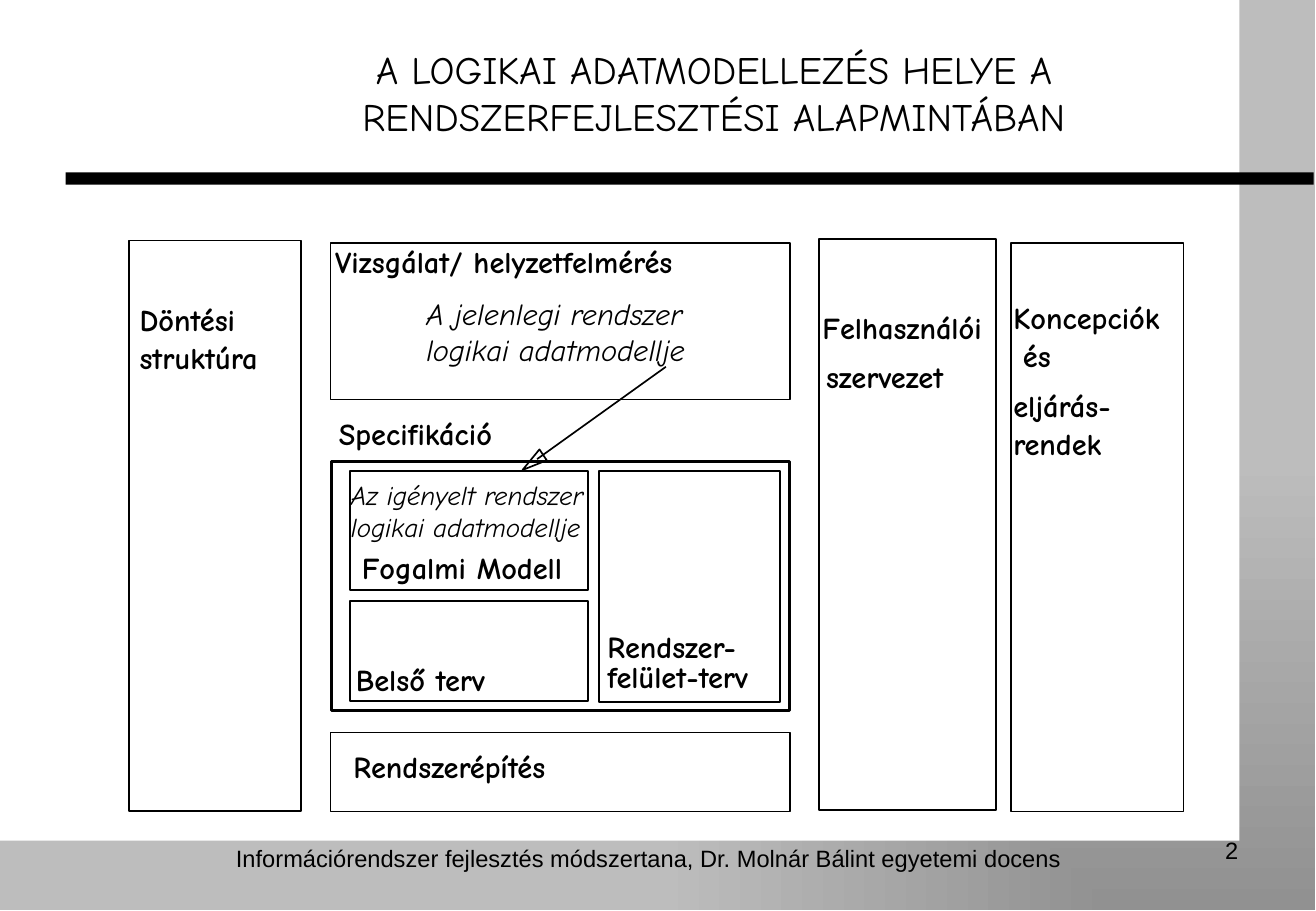
from lxml import etree
from pptx import Presentation
from pptx.dml.color import RGBColor
from pptx.enum.shapes import MSO_CONNECTOR as Connector, MSO_SHAPE as Shape
from pptx.enum.text import PP_ALIGN as Align
from pptx.oxml import parse_xml
from pptx.oxml.ns import nsdecls, qn
from pptx.util import Inches, Pt

COLORS = {"ink": "000000", "paper": "FFFFFF", "dark": "919191", "light": "BDBDBD"}


class Diagram:
    """Holds the style and the current slide."""

    def __init__(self, page, font="Comic Neue", size=18):
        self.page = page
        self.font = font
        self.size = size

    def color(self, name):
        return RGBColor.from_string(COLORS[name])

    def outline(self, shape, weight=1):
        shape.line.color.rgb = self.color("ink")
        shape.line.width = Pt(weight)

    def rectangle(self, left, top, width, height):
        box = self.page.shapes.add_shape(
            Shape.RECTANGLE, *map(Inches, (left, top, width, height)))
        box.shadow.inherit = False
        return box

    def panel(self, left, top, width, height, fill):
        box = self.rectangle(left, top, width, height)
        box.fill.solid()
        box.fill.fore_color.rgb = self.color(fill)
        box.line.fill.background()

    def gradient_panel(self, left, top, width, height, inner, outer):
        box = self.rectangle(left, top, width, height)
        box.line.fill.background()
        box.fill.gradient()
        for stop, name, position in zip(box.fill.gradient_stops, (inner, outer), (0, 1)):
            stop.color.rgb = self.color(name)
            stop.position = position
        # Spread from the lower right corner instead of along a line
        gradient = box.element.spPr.find(qn("a:gradFill"))
        gradient.replace(gradient.find(qn("a:lin")), parse_xml(
            f'<a:path {nsdecls("a")} path="rect">'
            '<a:fillToRect l="100000" t="100000" r="0" b="0"/></a:path>'))

    def frame(self, left, top, width, height, weight=1):
        box = self.rectangle(left, top, width, height)
        box.fill.background()
        self.outline(box, weight)

    def text(self, words, left, top, width, height=0.4, size=None, font=None,
             bold=False, italic=False, align=Align.LEFT, wrap=False):
        box = self.page.shapes.add_textbox(*map(Inches, (left, top, width, height)))
        frame = box.text_frame
        frame.word_wrap = wrap
        frame.text = words
        for para in frame.paragraphs:
            para.alignment = align
            for span in para.runs:
                span.font.name = font or self.font
                span.font.size = Pt(size or self.size)
                span.font.bold = bold
                span.font.italic = italic
                span.font.color.rgb = self.color("ink")

    def line(self, start, end):
        line = self.page.shapes.add_connector(
            Connector.STRAIGHT, *map(Inches, (*start, *end)))
        self.outline(line)
        etree.SubElement(line.element.spPr, qn("a:effectLst"))

    def polygon(self, first, *others):
        builder = self.page.shapes.build_freeform(*map(Inches, first))
        builder.add_line_segments(
            [tuple(map(Inches, point)) for point in others], close=True)
        shape = builder.convert_to_shape()
        shape.shadow.inherit = False
        shape.fill.background()
        self.outline(shape)


def main():
    deck = Presentation()
    deck.slide_width = Inches(10.83)
    deck.slide_height = Inches(7.5)
    diagram = Diagram(deck.slides.add_slide(deck.slide_layouts[6]))

    # Background and title rule
    diagram.gradient_panel(0, 0, 10.82, 7.49, "dark", "light")
    diagram.panel(0, 0, 10.2, 6.92, "paper")
    diagram.panel(0.54, 1.42, 10.27, 0.1, "ink")

    # Footer, page number and title
    diagram.text("Információrendszer fejlesztés módszertana, Dr. Molnár Bálint egyetemi docens",
                 1.56, 6.9, 7.56, 0.6, size=14, font="Arial", align=Align.CENTER, wrap=True)
    diagram.text("2", 7.76, 6.83, 2.53, 0.52, size=14, font="Arial",
                 align=Align.RIGHT, wrap=True)
    diagram.text("A LOGIKAI ADATMODELLEZÉS HELYE A RENDSZERFEJLESZTÉSI ALAPMINTÁBAN",
                 1.61, 0.33, 8.54, 0.87, size=23, align=Align.CENTER, wrap=True)

    # Frames: three side columns, three stages, three specification parts
    for area in (
        (1.06, 1.98, 1.42, 4.7), (6.74, 1.97, 1.46, 4.7), (8.32, 2, 1.42, 4.68),
        (2.73, 3.8, 3.77, 2.05, 2), (2.72, 2, 3.78, 1.29), (2.72, 6.03, 3.78, 0.65),
        (2.88, 3.88, 1.96, 0.98), (4.93, 3.88, 1.49, 1.9), (2.88, 4.95, 1.96, 0.82),
    ):
        diagram.frame(*area)

    # Bold labels
    for words, left, top, width in (
        ("Döntési", 1.05, 2.43, 1.09),
        ("struktúra", 1.05, 2.74, 1.33),
        ("Vizsgálat/ helyzetfelmérés", 2.66, 1.95, 3.46),
        ("Felhasználói", 6.67, 2.5, 1.64),
        ("szervezet", 6.7, 2.9, 1.37),
        ("Koncepciók", 8.24, 2.41, 1.48),
        ("és", 8.32, 2.73, 0.49),
        ("eljárás-", 8.24, 3.14, 1.18),
        ("rendek", 8.24, 3.45, 1.02),
        ("Specifikáció", 2.69, 3.37, 1.65),
        ("Fogalmi Modell", 2.88, 4.47, 1.97),
        ("Belső terv", 2.83, 5.39, 1.43),
        ("Rendszer-", 4.9, 5.12, 1.45),
        ("felület-terv", 4.9, 5.37, 1.65),
        ("Rendszerépítés", 2.81, 6.11, 2.02),
    ):
        diagram.text(words, left, top, width, bold=True)

    # Data models and the arrow between them
    diagram.text("A jelenlegi rendszer\nlogikai adatmodellje", 3.41, 2.38, 2.63, 0.7, italic=True)
    diagram.line((5.48, 3.02), (4.42, 3.78))
    diagram.polygon((4.5, 3.79), (4.44, 3.7), (4.3, 3.87))
    diagram.text("Az igényelt rendszer\nlogikai adatmodellje", 2.79, 3.89, 2.44, 0.64,
                 size=16, italic=True)

    deck.save("out.pptx")


if __name__ == "__main__":
    main()
